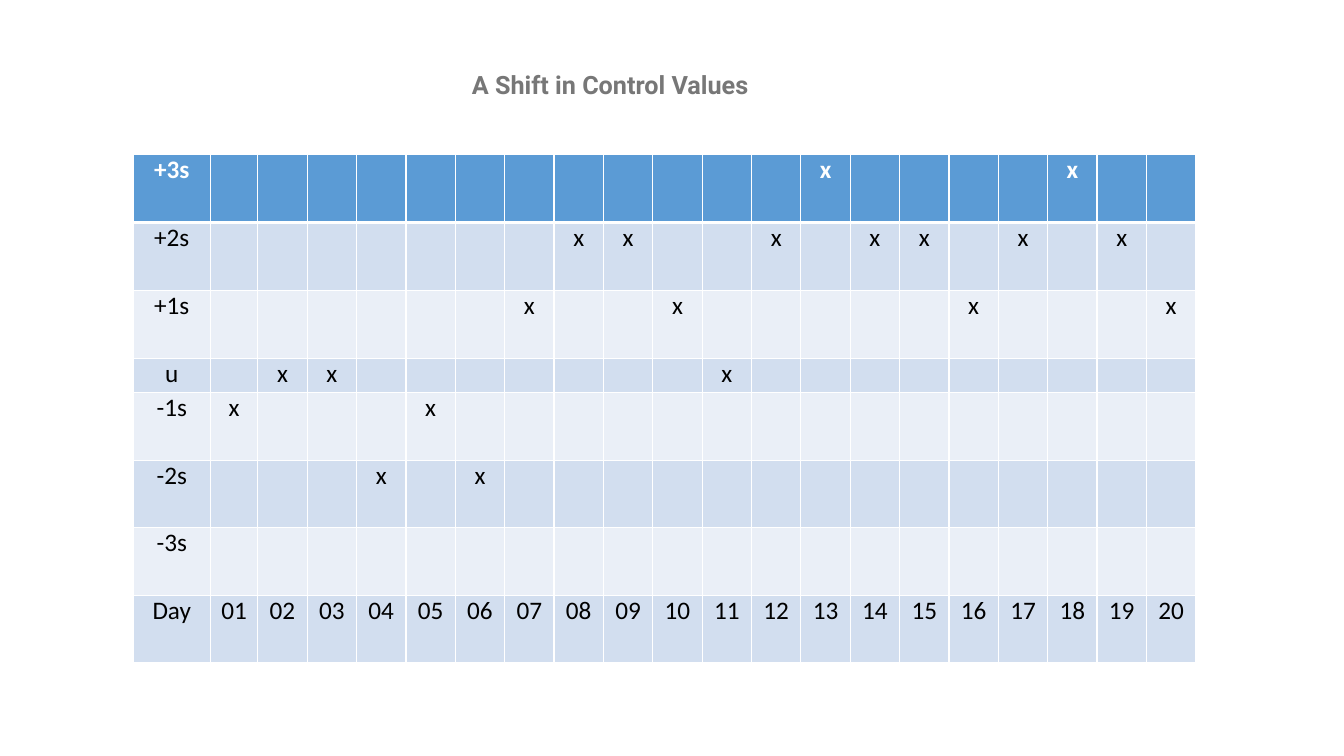
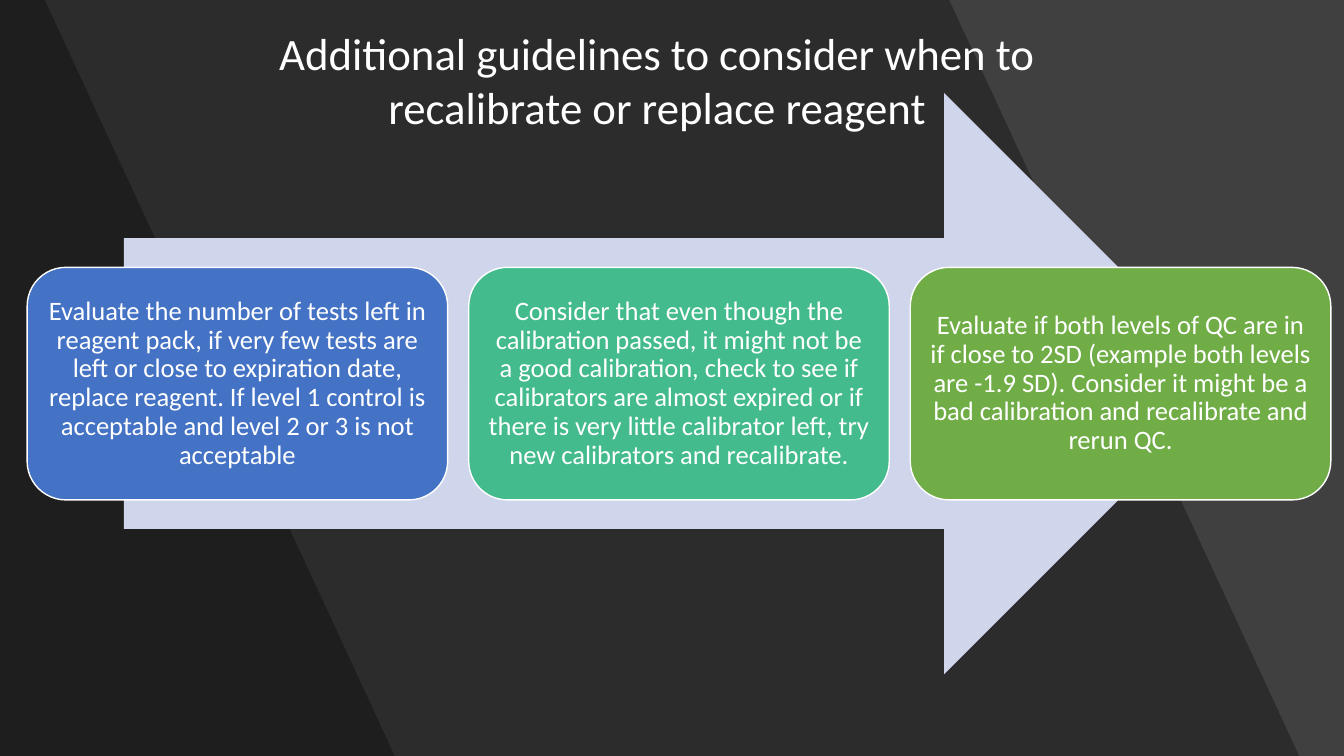
from pptx import Presentation
from pptx.dml.color import RGBColor
from pptx.enum.shapes import MSO_SHAPE
from pptx.enum.text import MSO_ANCHOR, PP_ALIGN
from pptx.oxml.ns import qn
from pptx.util import Pt
from lxml import etree

ARROW = MSO_SHAPE.RIGHT_ARROW
ROUND = MSO_SHAPE.ROUNDED_RECTANGLE
CENTER = PP_ALIGN.CENTER
TOP, MIDDLE = MSO_ANCHOR.TOP, MSO_ANCHOR.MIDDLE

COLORS = {
    "white": "FFFFFF", "black": "000000", "gray": "777777", "dark": "404040",
    "head": "5B9BD5", "odd": "D2DEEF", "even": "EAEFF7", "arrow": "CFD5EA",
    "blue": "4472C4", "teal": "43BB8D", "green": "70AD47",
}
RGB = {name: RGBColor.from_string(code) for name, code in COLORS.items()}


def write(frame, text, size, color, bold=False, font="Calibri"):
    """Put one centred run into a text frame."""
    para = frame.paragraphs[0]
    para.alignment = CENTER
    run = para.add_run()
    run.text = text
    run.font.name = font
    run.font.size = Pt(size)
    run.font.bold = bold
    run.font.color.rgb = RGB[color]


def add_title(slide, place, text, size, color, **style):
    """Add a wrapped title box at left, top, width, height."""
    frame = slide.shapes.add_textbox(*map(Pt, place)).text_frame
    frame.word_wrap = True
    write(frame, text, size, color, **style)


deck = Presentation()
deck.slide_width, deck.slide_height = Pt(960), Pt(540)
blank = deck.slide_layouts[6]

# Slide 1: control values by day
slide = deck.slides.add_slide(blank)
slide.background.fill.solid()
slide.background.fill.fore_color.rgb = RGB["white"]

# Level, row height, days marked
levels = [
    ("+3s", 48.8, [13, 18]),
    ("+2s", 48.8, [8, 9, 12, 14, 15, 17, 19]),
    ("+1s", 48.4, [7, 10, 16, 20]),
    ("u", 24.4, [2, 3, 11]),
    ("-1s", 48.2, [1, 5]),
    ("-2s", 48.2, [4, 6]),
    ("-3s", 48.2, []),
    ("Day", 48.2, []),
]
widths = [55.4, 33.8] + [35.28] * 19
heights = [height for _, height, _ in levels]
table = slide.shapes.add_table(
    len(levels), len(widths), Pt(95), Pt(110.2),
    Pt(sum(widths)), Pt(sum(heights))).table
table.first_row = table.horz_banding = False
for col, width in zip(table.columns, widths):
    col.width = Pt(width)

for row, (level, height, days) in enumerate(levels):
    table.rows[row].height = Pt(height)
    fill = "head" if row == 0 else ("odd" if row % 2 else "even")
    for day in range(len(widths)):
        cell = table.cell(row, day)
        cell.margin_left = cell.margin_right = Pt(0)
        cell.margin_top = cell.margin_bottom = Pt(0)
        cell.vertical_anchor = TOP
        cell.fill.solid()
        cell.fill.fore_color.rgb = RGB[fill]

        # White borders, thicker under the first row
        props = cell._tc.get_or_add_tcPr()
        for spot, side in enumerate(("lnL", "lnR", "lnT", "lnB")):
            thick = (row, side) in ((0, "lnB"), (1, "lnT"))
            line = etree.Element(qn("a:" + side), w=str(Pt(3 if thick else 1)))
            solid = etree.SubElement(line, qn("a:solidFill"))
            etree.SubElement(solid, qn("a:srgbClr"), val=COLORS["white"])
            props.insert(spot, line)

        if day == 0:
            text = level
        elif level == "Day":
            text = f"{day:02}"
        else:
            text = "x" if day in days else ""
        if text:
            write(cell.text_frame, text, 18,
                  "black" if row else "white", bold=row == 0)

add_title(slide, (195.8, 46, 480.2, 51), "A Shift in Control Values",
          18, "gray", bold=True, font="Roboto")

# Slide 2: guidelines along an arrow
slide = deck.slides.add_slide(blank)
slide.background.fill.solid()
slide.background.fill.fore_color.rgb = RGB["dark"]

# Slanted shades
for top, base in ((678.2, 928), (31.7, 282.2)):
    pen = slide.shapes.build_freeform(0, 0, scale=Pt(1))
    pen.add_line_segments([(top, 0), (base, 540), (0, 540)], close=True)
    shade = pen.convert_to_shape()
    shade.shadow.inherit = False
    shade.line.fill.background()
    shade.fill.solid()
    shade.fill.fore_color.rgb = RGB["black"]
    tint = shade._element.spPr.find(".//" + qn("a:srgbClr"))
    etree.SubElement(tint, qn("a:alpha"), val="30000")

# Arrow
arrow = slide.shapes.add_shape(ARROW, Pt(88.5), Pt(66.4), Pt(793.5), Pt(415.2))
arrow.shadow.inherit = False
arrow.line.fill.background()
arrow.fill.solid()
arrow.fill.fore_color.rgb = RGB["arrow"]

# Guideline boxes
guides = [
    ("blue", "Evaluate the number of tests left in reagent pack, if very few "
             "tests are left or close to expiration date, replace reagent. "
             "If level 1 control is acceptable and level 2 or 3 is not "
             "acceptable"),
    ("teal", "Consider that even though the calibration passed, it might not "
             "be a good calibration, check to see if calibrators are almost "
             "expired or if there is very little calibrator left, try new "
             "calibrators and recalibrate."),
    ("green", "Evaluate if both levels of QC are in if close to 2SD (example "
              "both levels are -1.9 SD). Consider it might be a bad "
              "calibration and recalibrate and rerun QC."),
]
for spot, (color, text) in enumerate(guides):
    box = slide.shapes.add_shape(
        ROUND, Pt(19.4 + spot * 315.4), Pt(191), Pt(300.4), Pt(166.1))
    box.shadow.inherit = False
    box.fill.solid()
    box.fill.fore_color.rgb = RGB[color]
    box.line.color.rgb = RGB["white"]
    box.line.width = Pt(1)
    frame = box.text_frame
    frame.word_wrap = True
    frame.vertical_anchor = MIDDLE
    frame.margin_left = frame.margin_right = Pt(5.7)
    frame.margin_top = frame.margin_bottom = Pt(5.7)
    write(frame, text, 19, "white")
    frame.paragraphs[0].line_spacing = 0.9

add_title(slide, (186.5, 15.1, 566, 85),
          "Additional guidelines to consider when to recalibrate or replace "
          "reagent", 32, "white")

deck.save("out.pptx")
